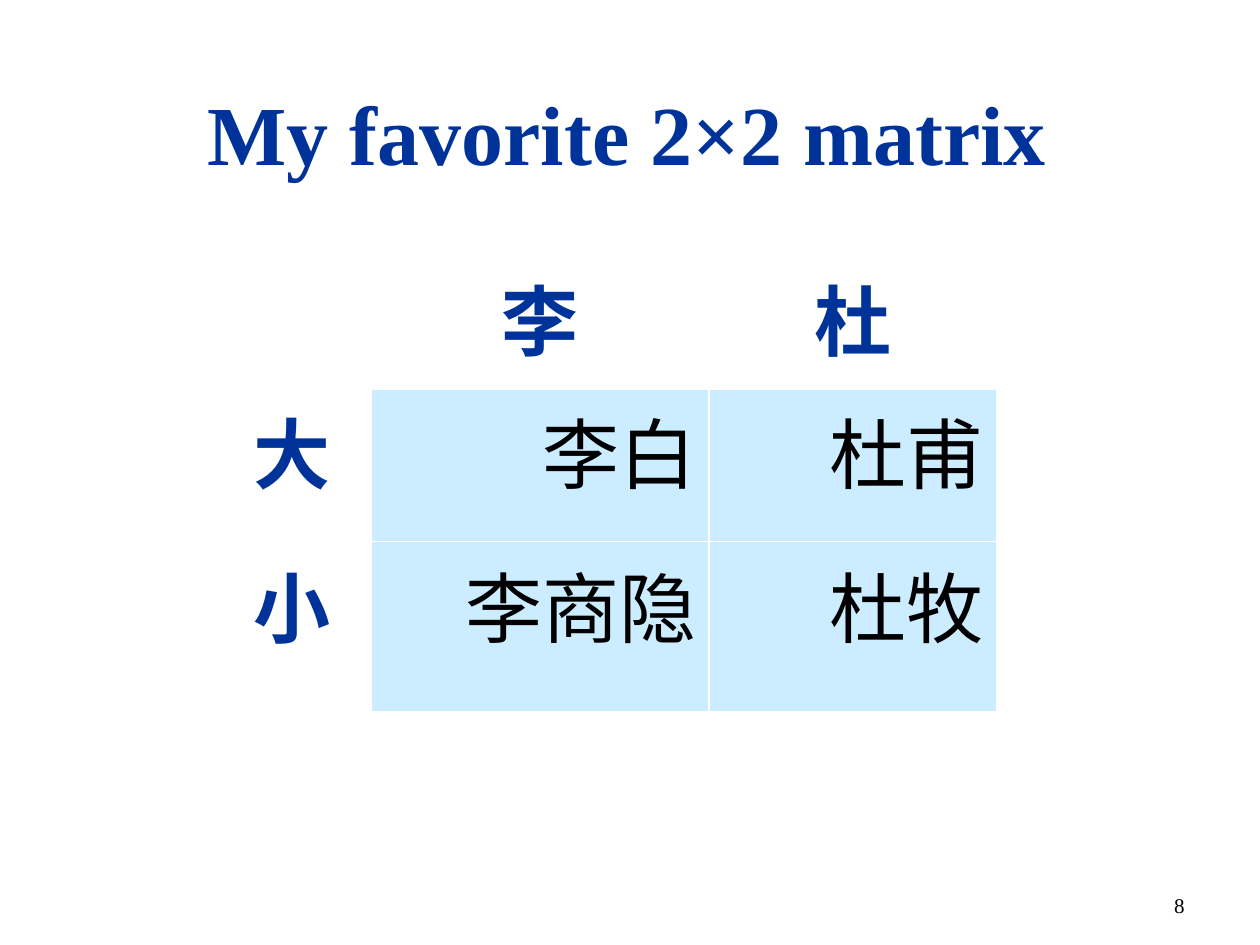
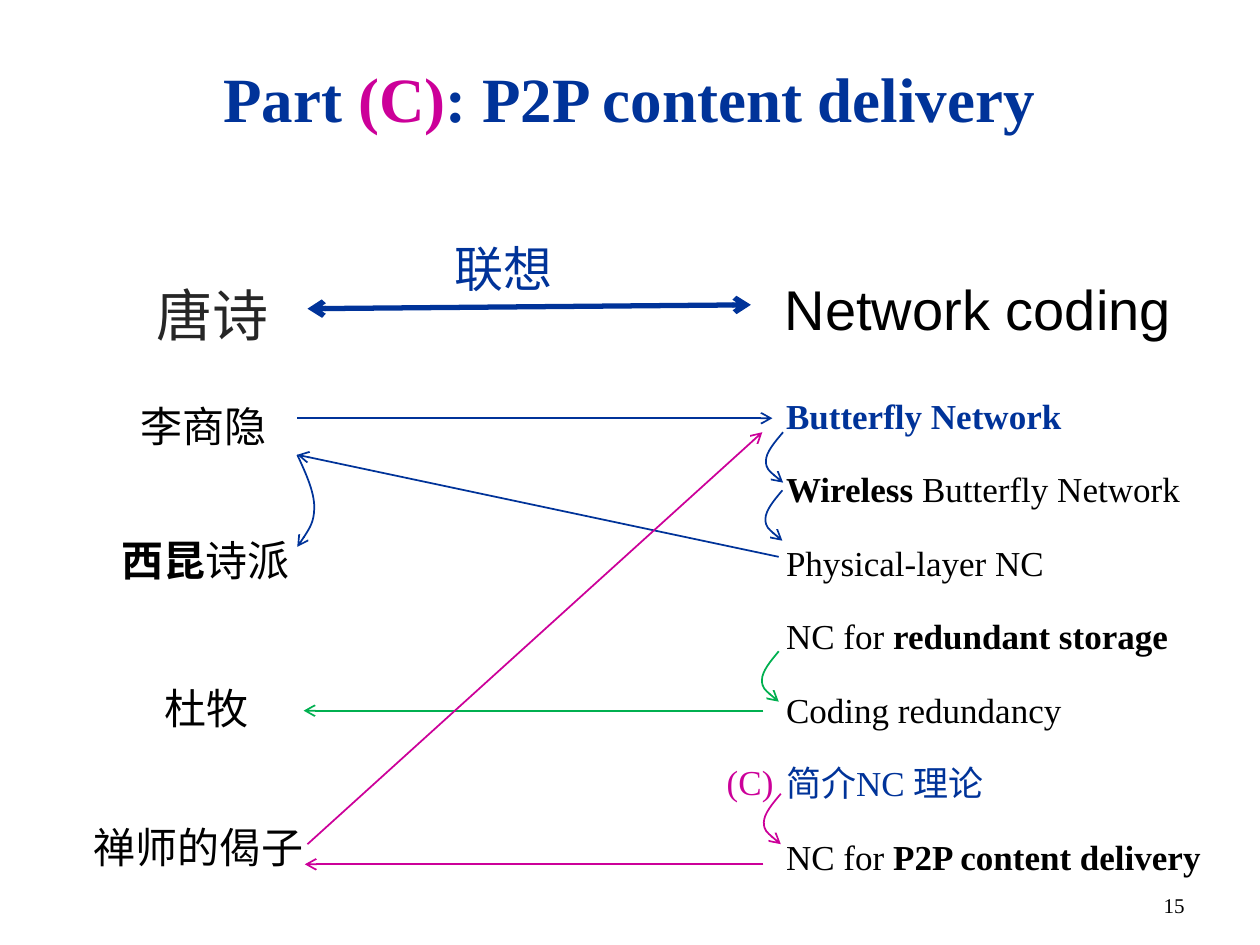
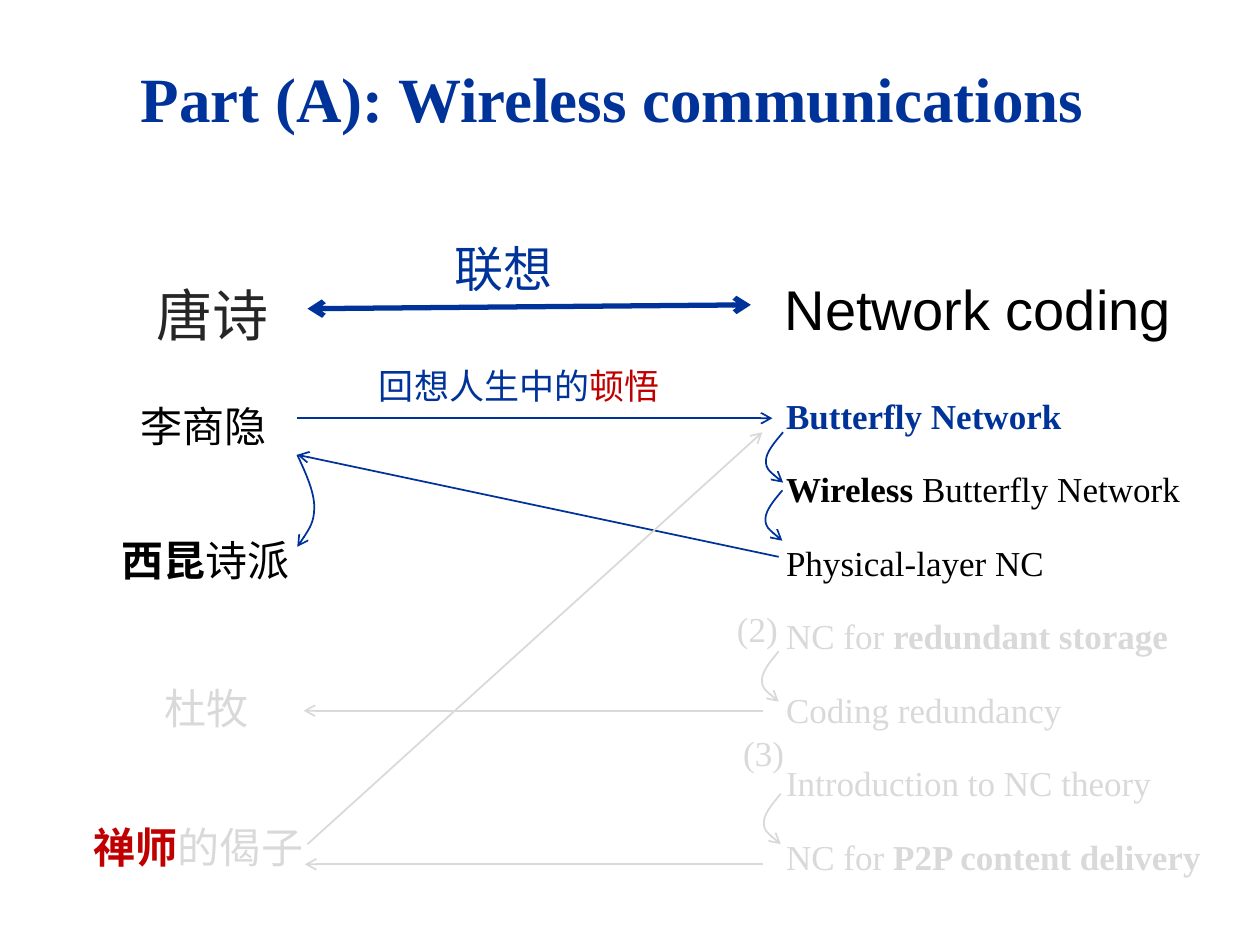
from lxml.etree import SubElement
from pptx import Presentation
from pptx.dml.color import RGBColor
from pptx.enum.shapes import MSO_CONNECTOR
from pptx.enum.text import MSO_ANCHOR, PP_ALIGN
from pptx.oxml.ns import qn
from pptx.util import Pt

COLORS = {
    "navy": "003399",
    "black": "000000",
    "charcoal": "262626",
    "magenta": "CC0099",
    "green": "00B050",
    "red": "C00000",
    "faded": "D9D9D9",
    "cell": "CCECFF",
    "white": "FFFFFF",
}
SERIF, SANS, COMIC, CJK = "Times New Roman", "Arial", "Comic Neue", "Noto Sans CJK TC"
LEFT, CENTER, RIGHT = PP_ALIGN.LEFT, PP_ALIGN.CENTER, PP_ALIGN.RIGHT

MATRIX_TITLE = "My favorite 2×2 matrix"
MATRIX = [
    ["", "李", "杜"],
    ["大", "李白", "杜甫"],
    ["小", "李商隐", "杜牧"],
]
MATRIX_BOX = (121.6, 145.4, 447.8, 261.4)
COLUMN_WIDTHS = [90.7, 193, 164.1]
ROW_HEIGHTS = [76.3, 87.8, 97.3]

PART_SLIDES = [
    {
        "title": [("Part ", "navy", True), ("(C)", "magenta", True),
                  (": P2P content delivery", "navy", True)],
        "title_align": CENTER,
        "number": "15",
        "storage_line": "green",
        "delivery_line": "magenta",
        "storage_text": "black",
        "delivery_text": "black",
        "theory": ("简介NC 理论", "navy", False),
        "verse": [("禅师的偈子", "black", False)],
        "notes": [([("(C)", "magenta", False)], (408.2, 431.3, 46.8, 31.7))],
    },
    {
        "title": [("Part (A): Wireless communications", "navy", True)],
        "title_align": LEFT,
        "number": None,
        "storage_line": "faded",
        "delivery_line": "faded",
        "storage_text": "faded",
        "delivery_text": "faded",
        "theory": ("Introduction to NC theory", "faded", False),
        "verse": [("禅师", "red", True), ("的偈子", "faded", False)],
        "notes": [
            ([("(2)", "faded", False)], (414, 343.4, 43.2, 31.7)),
            ([("(3)", "faded", False)], (417.6, 414.7, 43.2, 31.7)),
            ([("回想人生中的", "navy", False), ("顿悟", "red", False)],
             (209.5, 204.5, 201.6, 31.7)),
        ],
    },
]

HEADINGS = [
    ("唐诗", "charcoal", 32, COMIC, LEFT, (82.1, 157, 79.2, 46.1), False),
    ("Network coding", "black", 32, SANS, LEFT, (441.4, 153.4, 236.2, 46.1), True),
    ("联想", "navy", 28, SERIF, CENTER, (243.4, 132.5, 88.6, 41), True),
]
TOPIC_BOX = (442.1, 221.8, 252, 285.8)
ARROWS = [
    ((169.9, 239), (441.4, 239), "wireless_line"),
    ((445, 318.2), (169.9, 259.9), "wireless_line"),
    ((436.3, 406.1), (173.5, 406.1), "storage_line"),
    ((436.3, 493.9), (174.2, 493.9), "delivery_line"),
    ((175.7, 482.4), (435.6, 247), "delivery_line"),
]
CURVES = [
    ((447.5, 247), -9.8, 28.8, "wireless_line"),
    ((447.1, 280.2), -9.7, 28.8, "wireless_line"),
    ((169.9, 259.9), 9.7, 52.6, "wireless_line"),
    ((445, 372.2), -9.6, 28.8, "storage_line"),
    ((446.2, 453.6), -9.7, 28.8, "delivery_line"),
]
CURVE_CONTROLS = [(0.5, 0.2), (1, 0.4), (1, 0.57), (1, 0.73), (0.5, 0.87), (0, 1)]


def rgb(name):
    return RGBColor.from_string(COLORS[name])


def add_runs(paragraph, runs, size, font):
    for text, color, bold in runs:
        run = paragraph.add_run()
        run.text = text
        run.font.size = Pt(size)
        run.font.name = font
        run.font.bold = bold
        run.font.color.rgb = rgb(color)
        SubElement(run.font._element, qn("a:ea"), typeface=CJK)


def add_text(slide, box, paragraphs, size, font=SERIF, align=LEFT,
             anchor=MSO_ANCHOR.TOP, wrap=True):
    shape = slide.shapes.add_textbox(*map(Pt, box))
    frame = shape.text_frame
    frame.word_wrap = wrap
    frame.vertical_anchor = anchor
    for index, runs in enumerate(paragraphs):
        paragraph = frame.add_paragraph() if index else frame.paragraphs[0]
        paragraph.alignment = align
        add_runs(paragraph, runs, size, font)
    return frame


def add_title(slide, box, runs, size, align=CENTER):
    return add_text(slide, box, [runs], size, align=align, anchor=MSO_ANCHOR.MIDDLE)


def add_number(slide, number):
    add_text(slide, (516.2, 491.8, 167.8, 36), [[(number, "black", False)]], 12,
             align=RIGHT, anchor=MSO_ANCHOR.BOTTOM)


def style_line(shape, color, width, ends):
    shape.line.color.rgb = rgb(color)
    shape.line.width = Pt(width)
    line = shape.line._get_or_add_ln()
    for end in ends:
        SubElement(line, qn(end), type="arrow")


def add_arrow(slide, start, finish, color, width=1, ends=("a:tailEnd",)):
    connector = slide.shapes.add_connector(
        MSO_CONNECTOR.STRAIGHT, *map(Pt, start + finish))
    style_line(connector, color, width, ends)
    SubElement(connector._element.spPr, qn("a:effectLst"))


def add_curve(slide, start, bulge, drop, color):
    left, top = start
    builder = slide.shapes.build_freeform(Pt(left), Pt(top))
    builder.add_line_segments(
        [(Pt(left + bulge * x), Pt(top + drop * y)) for x, y in CURVE_CONTROLS],
        close=False)
    shape = builder.convert_to_shape()
    shape.shadow.inherit = False
    shape.fill.background()
    style_line(shape, color, 1, ["a:tailEnd"])
    outline = next(shape._element.iter(qn("a:path")))
    segments = outline.findall(qn("a:lnTo"))
    for first in range(0, len(segments), 3):
        bezier = SubElement(outline, qn("a:cubicBezTo"))
        for segment in segments[first:first + 3]:
            bezier.append(segment[0])
            outline.remove(segment)


def add_borders(cell, row):
    properties = cell._tc.get_or_add_tcPr()
    for side in ("L", "R", "T", "B"):
        thick = (row, side) in [(0, "B"), (1, "T")]
        border = SubElement(properties, qn(f"a:ln{side}"), w=str(Pt(3 if thick else 1)))
        fill = SubElement(border, qn("a:solidFill"))
        SubElement(fill, qn("a:srgbClr"), val=COLORS["white"])


def add_matrix(slide):
    table = slide.shapes.add_table(3, 3, *map(Pt, MATRIX_BOX)).table
    for column, width in zip(table.columns, COLUMN_WIDTHS):
        column.width = Pt(width)
    for table_row, height in zip(table.rows, ROW_HEIGHTS):
        table_row.height = Pt(height)
    for row, texts in enumerate(MATRIX):
        for column, text in enumerate(texts):
            cell = table.cell(row, column)
            add_borders(cell, row)
            poet = row > 0 and column > 0
            if poet:
                cell.fill.solid()
                cell.fill.fore_color.rgb = rgb("cell")
            else:
                cell.fill.background()
            paragraph = cell.text_frame.paragraphs[0]
            paragraph.alignment = RIGHT if poet else CENTER
            if text:
                run = (text, "black" if poet else "navy", not poet)
                add_runs(paragraph, [run], 44, SANS if poet else SERIF)


def add_topics(slide, part):
    storage, delivery = part["storage_text"], part["delivery_text"]
    topics = [
        [("Butterfly Network", "navy", True)],
        [("Wireless", "black", True), (" Butterfly Network", "black", False)],
        [("Physical-layer NC", "black", False)],
        [("NC for ", storage, False), ("redundant storage", storage, True)],
        [("Coding redundancy", storage, False)],
        [part["theory"]],
        [("NC for ", delivery, False), ("P2P content delivery", delivery, True)],
    ]
    frame = add_text(slide, TOPIC_BOX, topics, 20)
    for paragraph in frame.paragraphs:
        paragraph.space_before = Pt(18)
        paragraph.line_spacing = Pt(24)


def add_part_slide(slide, part):
    title = add_title(slide, (73.4, 25.9, 572.4, 70.6), part["title"], 36,
                      part["title_align"])
    title.margin_bottom = Pt(15)
    line_colors = {**part, "wireless_line": "navy"}
    for start, finish, group in ARROWS:
        add_arrow(slide, start, finish, line_colors[group])
    for start, bulge, drop, group in CURVES:
        add_curve(slide, start, bulge, drop, line_colors[group])
    add_arrow(slide, (175.7, 176.4), (429.1, 174.2), "navy", 3,
              ["a:headEnd", "a:tailEnd"])
    for text, color, size, font, align, box, wrap in HEADINGS:
        add_text(slide, box, [[(text, color, False)]], size, font, align, wrap=wrap)
    add_text(slide, (73.4, 225.4, 150.5, 36), [[("李商隐", "black", False)]], 24, SANS)
    add_text(slide, (62.6, 301.7, 111.6, 36),
             [[("西昆", "black", True), ("诗派", "black", False)]], 24)
    add_text(slide, (87.1, 386.6, 63.4, 36),
             [[("杜牧", part["storage_text"], False)]], 24, CJK, wrap=False)
    add_text(slide, (46.1, 465.8, 144.7, 36), [part["verse"]], 24)
    add_topics(slide, part)
    for runs, box in part["notes"]:
        add_text(slide, box, [runs], 20)
    if part["number"]:
        add_number(slide, part["number"])


def main():
    presentation = Presentation()
    presentation.slide_width, presentation.slide_height = Pt(720), Pt(540)
    blank = presentation.slide_layouts[6]
    slide = presentation.slides.add_slide(blank)
    add_title(slide, (25.2, 40.3, 666, 70.6), [(MATRIX_TITLE, "navy", True)], 48)
    add_matrix(slide)
    add_number(slide, "8")
    for part in PART_SLIDES:
        add_part_slide(presentation.slides.add_slide(blank), part)
    presentation.save("out.pptx")


if __name__ == "__main__":
    main()
